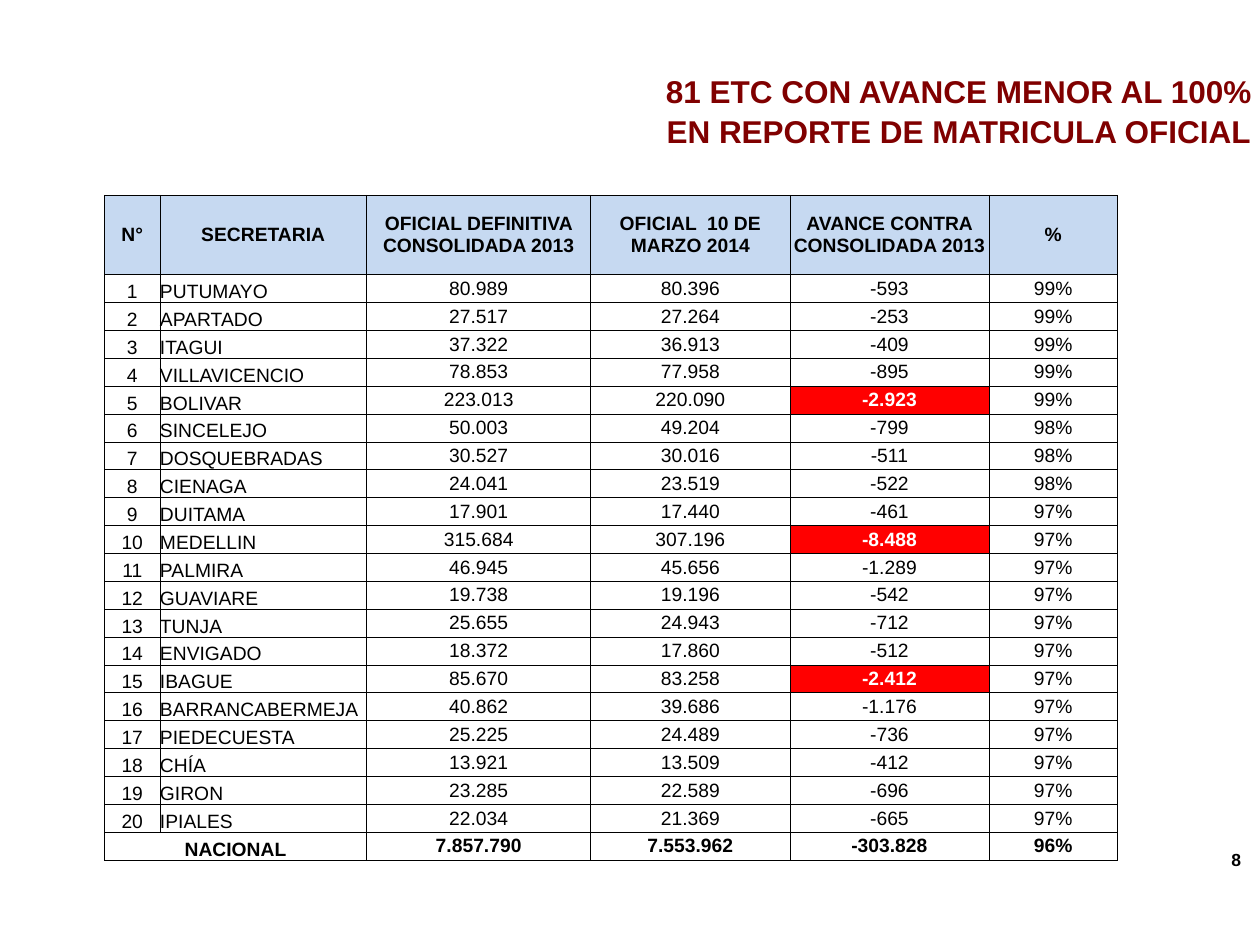
from dataclasses import dataclass
from typing import NamedTuple, Optional

from lxml.etree import SubElement
from pptx import Presentation
from pptx.dml.color import RGBColor as RGB
from pptx.enum.text import MSO_ANCHOR as Anchor, MSO_AUTO_SIZE as AutoSize, PP_ALIGN as Align
from pptx.oxml.ns import qn
from pptx.util import Inches, Pt


@dataclass(frozen=True)
class Theme:
    font: str = "Arial"
    ink: RGB = RGB(0, 0, 0)
    title: RGB = RGB(0x80, 0, 0)
    header_fill: RGB = RGB(0xC6, 0xD9, 0xF1)
    alert_fill: RGB = RGB(0xFF, 0, 0)
    alert_ink: RGB = RGB(0xFF, 0xFF, 0xFF)
    title_size: Pt = Pt(18)
    table_size: Pt = Pt(11)
    number_size: Pt = Pt(10)
    border: Pt = Pt(0.5)


class Enrolment(NamedTuple):
    name: str
    final_2013: int
    march_2014: int

    @property
    def advance(self) -> int:
        return self.march_2014 - self.final_2013

    def figures(self) -> list[str]:
        counts = (self.final_2013, self.march_2014, self.advance)
        share = f"{self.march_2014 / self.final_2013:.0%}"
        return [f"{count:,}".replace(",", ".") for count in counts] + [share]


THEME = Theme()
ALERT_BELOW = -2000
COLUMN_WIDTHS = (0.44, 1.64, 1.78, 1.58, 1.58, 1.02)
HEADER_HEIGHT, TABLE_HEIGHT = 0.63, 5.28
HEADERS = ("N°", "SECRETARIA", "OFICIAL DEFINITIVA CONSOLIDADA 2013",
           "OFICIAL  10 DE MARZO 2014", "AVANCE CONTRA CONSOLIDADA 2013", "%")
SECRETARIES = (
    Enrolment("PUTUMAYO", 80989, 80396),
    Enrolment("APARTADO", 27517, 27264),
    Enrolment("ITAGUI", 37322, 36913),
    Enrolment("VILLAVICENCIO", 78853, 77958),
    Enrolment("BOLIVAR", 223013, 220090),
    Enrolment("SINCELEJO", 50003, 49204),
    Enrolment("DOSQUEBRADAS", 30527, 30016),
    Enrolment("CIENAGA", 24041, 23519),
    Enrolment("DUITAMA", 17901, 17440),
    Enrolment("MEDELLIN", 315684, 307196),
    Enrolment("PALMIRA", 46945, 45656),
    Enrolment("GUAVIARE", 19738, 19196),
    Enrolment("TUNJA", 25655, 24943),
    Enrolment("ENVIGADO", 18372, 17860),
    Enrolment("IBAGUE", 85670, 83258),
    Enrolment("BARRANCABERMEJA", 40862, 39686),
    Enrolment("PIEDECUESTA", 25225, 24489),
    Enrolment("CHÍA", 13921, 13509),
    Enrolment("GIRON", 23285, 22589),
    Enrolment("IPIALES", 22034, 21369),
)
NATIONAL = Enrolment("NACIONAL", 7857790, 7553962)


def style(paragraph, size: Pt, color: RGB, align: Align, bold: bool = True) -> None:
    paragraph.alignment = align
    font = paragraph.font
    font.name, font.size, font.bold = THEME.font, size, bold
    font.color.rgb = color


def add_borders(cell) -> None:
    properties = cell._tc.get_or_add_tcPr()
    for side in ("a:lnL", "a:lnR", "a:lnT", "a:lnB"):
        line = SubElement(properties, qn(side), w=str(THEME.border))
        fill = SubElement(line, qn("a:solidFill"))
        SubElement(fill, qn("a:srgbClr"), val=str(THEME.ink))


def fill_cell(cell, text: str, *, bold: bool = False, align: Align = Align.CENTER,
              anchor: Anchor = Anchor.MIDDLE, fill: Optional[RGB] = None,
              color: RGB = THEME.ink) -> None:
    cell.text = text
    cell.vertical_anchor = anchor
    cell.margin_left = cell.margin_right = cell.margin_top = cell.margin_bottom = 0
    style(cell.text_frame.paragraphs[0], THEME.table_size, color, align, bold)
    add_borders(cell)
    if fill is None:
        cell.fill.background()
    else:
        cell.fill.solid()
        cell.fill.fore_color.rgb = fill


def fill_figures(table, row: int, enrolment: Enrolment, bold: bool = False) -> None:
    for column, figure in enumerate(enrolment.figures(), start=2):
        fill_cell(table.cell(row, column), figure, bold=bold)


def add_title(slide) -> None:
    title = slide.shapes.title
    title.left, title.top = Inches(5.18), Inches(0.52)
    title.width, title.height = Inches(4.86), Inches(0.71)
    frame = title.text_frame
    frame.text = "81 ETC CON AVANCE MENOR AL 100%\nEN REPORTE DE MATRICULA OFICIAL"
    frame.word_wrap = False
    frame.auto_size = AutoSize.NONE
    frame.vertical_anchor = Anchor.MIDDLE
    for paragraph in frame.paragraphs:
        style(paragraph, THEME.title_size, THEME.title, Align.CENTER)
        paragraph.line_spacing = 1.06


def add_page_number(slide) -> None:
    number = slide.shapes.add_textbox(Inches(9.67), Inches(6.74), Inches(0.22), Inches(0.17))
    frame = number.text_frame
    frame.text = "8"
    frame.word_wrap = True
    frame.vertical_anchor = Anchor.MIDDLE
    frame.margin_left = frame.margin_top = frame.margin_bottom = 0
    frame.margin_right = Inches(0.04)
    style(frame.paragraphs[0], THEME.number_size, THEME.ink, Align.RIGHT)


def add_enrolment_table(slide) -> None:
    total_row = len(SECRETARIES) + 1
    table = slide.shapes.add_table(
        total_row + 1, len(HEADERS), Inches(0.83), Inches(1.55),
        Inches(sum(COLUMN_WIDTHS)), Inches(TABLE_HEIGHT)).table
    table.horz_banding = False
    for column, width in zip(table.columns, COLUMN_WIDTHS):
        column.width = Inches(width)
    for row in table.rows:
        row.height = Inches((TABLE_HEIGHT - HEADER_HEIGHT) / total_row)
    table.rows[0].height = Inches(HEADER_HEIGHT)

    # Header
    for column, header in enumerate(HEADERS):
        fill_cell(table.cell(0, column), header, bold=True, fill=THEME.header_fill)

    # One row per secretary, large shortfalls in red
    for row, secretary in enumerate(SECRETARIES, start=1):
        fill_cell(table.cell(row, 0), str(row), anchor=Anchor.BOTTOM)
        fill_cell(table.cell(row, 1), secretary.name, align=Align.LEFT, anchor=Anchor.BOTTOM)
        fill_figures(table, row, secretary)
        if secretary.advance < ALERT_BELOW:
            advance = table.cell(row, 4)
            advance.fill.solid()
            advance.fill.fore_color.rgb = THEME.alert_fill
            style(advance.text_frame.paragraphs[0], THEME.table_size,
                  THEME.alert_ink, Align.CENTER)

    # National total
    label = table.cell(total_row, 0)
    label.merge(table.cell(total_row, 1))
    add_borders(table.cell(total_row, 1))
    fill_cell(label, NATIONAL.name, bold=True, anchor=Anchor.BOTTOM)
    fill_figures(table, total_row, NATIONAL, bold=True)


def main() -> None:
    deck = Presentation()
    deck.slide_width, deck.slide_height = Inches(10), Inches(7.5)
    slide = deck.slides.add_slide(deck.slide_layouts[5])
    add_page_number(slide)
    add_title(slide)
    add_enrolment_table(slide)
    deck.save("out.pptx")


if __name__ == "__main__":
    main()
